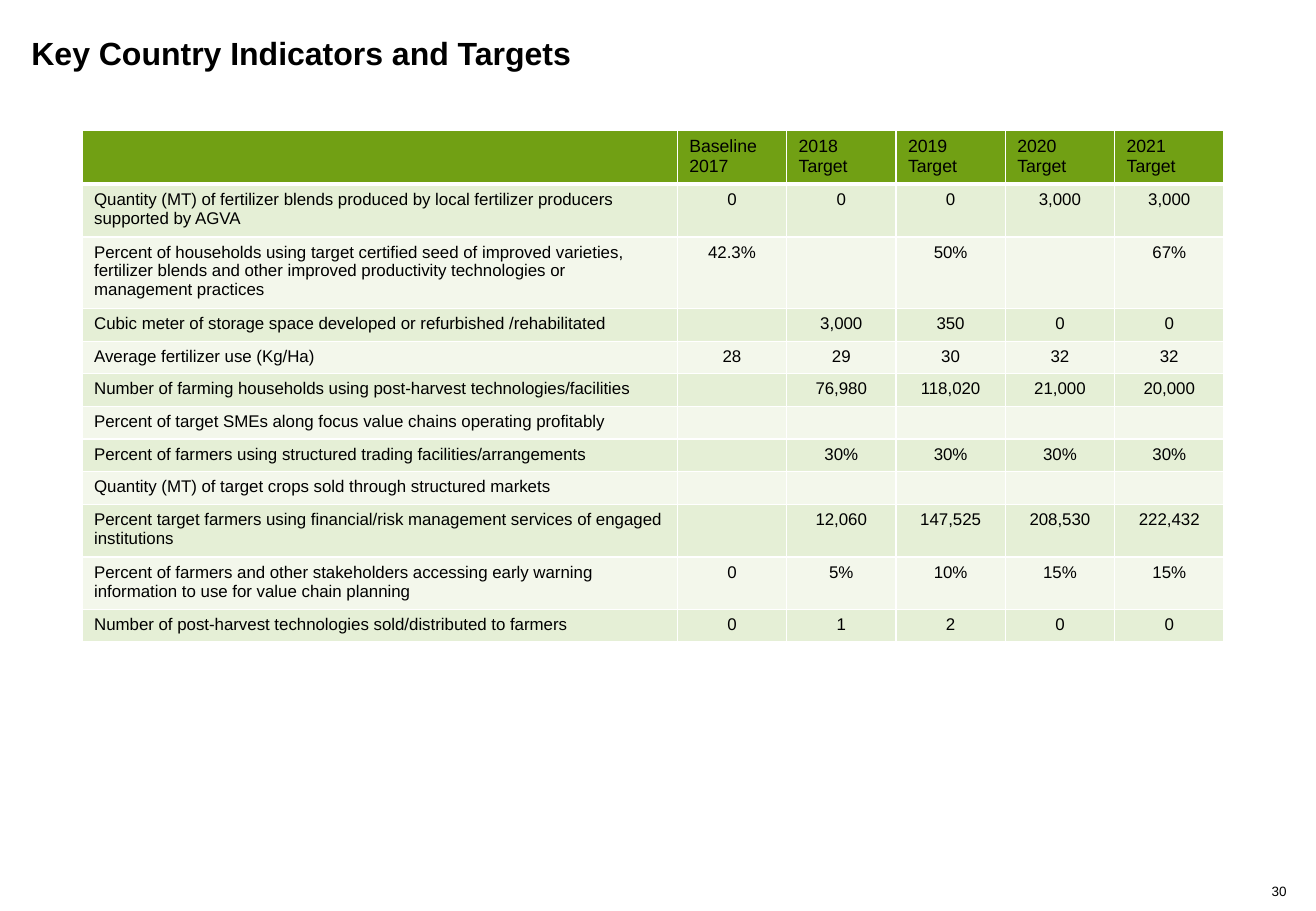
from dataclasses import dataclass

from lxml.etree import SubElement as Sub
from pptx import Presentation
from pptx.dml.color import RGBColor as Rgb
from pptx.enum.text import MSO_ANCHOR as Anchor, PP_ALIGN as Align
from pptx.oxml.ns import qn
from pptx.util import Pt

PX = 7620


@dataclass(frozen=True)
class Theme:
    """Colours, font and type sizes of the slide."""
    font: str = "Arial"
    ink: str = "000000"
    rule: str = "FFFFFF"
    head: str = "71A014"
    bands: tuple = ("E5EFD6", "F3F7EB")
    title: float = 19
    label: float = 10.5
    body: float = 10
    page: float = 8


THEME = Theme()
WIDTHS = [588] + [108] * 5
LINES = {1: 32, 2: 52, 3: 71}
HEAD = ["", "Baseline\n2017"] + [f"{year} Target" for year in range(2018, 2022)]
ROWS = [
    (2, "Quantity (MT) of fertilizer blends produced by local fertilizer "
        "producers supported by AGVA", "0", "0", "0", "3,000", "3,000"),
    (3, "Percent of households using target certified seed of improved "
        "varieties, fertilizer blends and other improved productivity "
        "technologies or management practices", "42.3%", "", "50%", "", "67%"),
    (1, "Cubic meter of storage space developed or refurbished /rehabilitated",
     "", "3,000", "350", "0", "0"),
    (1, "Average fertilizer use (Kg/Ha)", "28", "29", "30", "32", "32"),
    (1, "Number of farming households using post-harvest "
        "technologies/facilities", "", "76,980", "118,020", "21,000", "20,000"),
    (1, "Percent of target SMEs along focus value chains operating profitably",
     "", "", "", "", ""),
    (1, "Percent of farmers using structured trading facilities/arrangements",
     "", "30%", "30%", "30%", "30%"),
    (1, "Quantity (MT) of target crops sold through structured markets",
     "", "", "", "", ""),
    (2, "Percent target farmers using financial/risk management services of "
        "engaged institutions", "", "12,060", "147,525", "208,530", "222,432"),
    (2, "Percent of farmers and other stakeholders accessing early warning "
        "information to use for value chain planning",
     "0", "5%", "10%", "15%", "15%"),
    (1, "Number of post-harvest technologies sold/distributed to farmers",
     "0", "1", "2", "0", "0"),
]


def put_text(frame, text, size, align=Align.LEFT, bold=False):
    """Fill a text frame and format its runs, or its end mark if empty."""
    frame.text = text
    for par in frame.paragraphs:
        par.alignment = align
        for run in par.runs:
            font = run.font
            font.name, font.size, font.bold = THEME.font, Pt(size), bold
            font.color.rgb = Rgb.from_string(THEME.ink)
        if not par.runs:
            Sub(par._p, qn("a:endParaRPr"), sz=str(int(size * 100)))


def clear_frame(frame, anchor, wrap):
    """Remove the insets of a text frame and set anchor and wrapping."""
    frame.margin_left = frame.margin_right = 0
    frame.margin_top = frame.margin_bottom = 0
    frame.vertical_anchor, frame.word_wrap = anchor, wrap


def draw_edges(cell, base):
    """Rule the four sides of a cell, with its own width at the base."""
    props = cell._tc.get_or_add_tcPr()
    for side, width in zip("LRTB", (1, 1, 1, base)):
        line = Sub(props, qn(f"a:ln{side}"), w=str(Pt(width)))
        fill = Sub(line, qn("a:solidFill"))
        Sub(fill, qn("a:srgbClr"), val=THEME.rule)


def fill_row(row, texts, size, color, align, base=1):
    """Write, rule and shade one table row."""
    for num, (cell, text) in enumerate(zip(row.cells, texts)):
        put_text(cell.text_frame, text, size, align if num else Align.LEFT)
        draw_edges(cell, base)
        cell.fill.solid()
        cell.fill.fore_color.rgb = Rgb.from_string(color)


def add_grid(slide, left, top):
    """Add the table of indicators and yearly targets."""
    highs = [53] + [LINES[row[0]] for row in ROWS]
    frame = slide.shapes.add_table(len(highs), len(WIDTHS), left * PX, top * PX,
                                   sum(WIDTHS) * PX, sum(highs) * PX)
    table = frame.table
    for col, width in zip(table.columns, WIDTHS):
        col.width = width * PX
    for row, high in zip(table.rows, highs):
        row.height = high * PX
    fill_row(table.rows[0], HEAD, THEME.label, THEME.head, Align.LEFT, 3)
    for num, (_, *texts) in enumerate(ROWS):
        fill_row(table.rows[num + 1], texts, THEME.body,
                 THEME.bands[num % 2], Align.CENTER)


def set_title(slide, text, left, top, width, height):
    """Place and format the title."""
    title = slide.shapes.title
    title.left, title.top = left * PX, top * PX
    title.width, title.height = width * PX, height * PX
    clear_frame(title.text_frame, Anchor.BOTTOM, True)
    put_text(title.text_frame, text, THEME.title, bold=True)


def add_page(slide, text, left, top, width, height):
    """Add the page number."""
    box = slide.shapes.add_textbox(left * PX, top * PX, width * PX, height * PX)
    clear_frame(box.text_frame, Anchor.MIDDLE, False)
    put_text(box.text_frame, text, THEME.page, Align.RIGHT)


def main():
    """Build and save the slide."""
    deck = Presentation()
    deck.slide_width, deck.slide_height = 1300 * PX, 900 * PX
    slide = deck.slides.add_slide(deck.slide_layouts[5])
    set_title(slide, "Key Country Indicators and Targets", 31, 33, 1051, 38)
    add_grid(slide, 81, 129)
    add_page(slide, "30", 1254, 872, 17, 16)
    deck.save("out.pptx")


if __name__ == "__main__":
    main()
